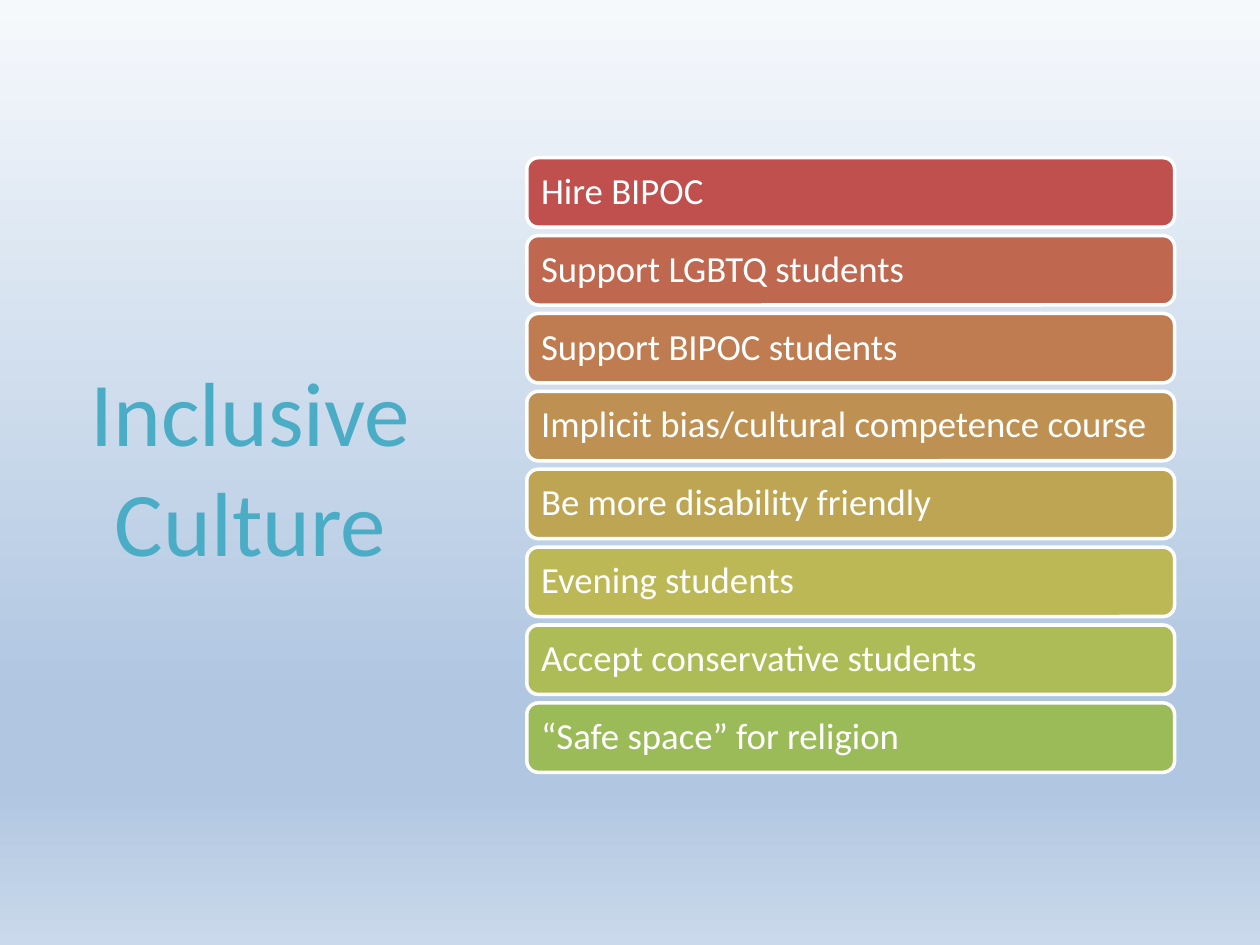
from lxml import etree
from pptx import Presentation
from pptx.dml.color import RGBColor
from pptx.enum import shapes, text
from pptx.oxml.ns import qn
from pptx.util import Cm, Pt

TITLE = "Inclusive Culture"
BARS = [
    ("Hire BIPOC", "C0504D"),
    ("Support LGBTQ students", "BF674F"),
    ("Support BIPOC students", "BF7C50"),
    ("Implicit bias/cultural competence course", "BE9152"),
    ("Be more disability friendly", "BDA554"),
    ("Evening students", "BCB856"),
    ("Accept conservative students", "AEBC57"),
    ("“Safe space” for religion", "9BBB59"),
]
COLORS = {"title": "4BACC6", "white": "FFFFFF"}
BACKGROUND = [(0, "F6F9FC"), (74, "B0C6E1"), (83, "B0C6E1"), (100, "CAD9EB")]
FONT = "Calibri"

# Bar stack, in cm
LEFT, TOP, WIDTH, HEIGHT, PITCH = 10.62, 3.18, 13.06, 1.4, 1.57


def style(p, size, color, align):
    p.alignment = align
    p.font.name = FONT
    p.font.size = Pt(size)
    p.font.color.rgb = RGBColor.from_string(color)


def set_background(s):
    fill = s.background.fill
    fill.gradient()
    fill.gradient_angle = 270
    stops = s.element.find(".//" + qn("a:gsLst"))
    for old in list(stops):
        stops.remove(old)
    for percent, color in BACKGROUND:
        stop = etree.SubElement(stops, qn("a:gs"), pos=str(percent * 1000))
        etree.SubElement(stop, qn("a:srgbClr"), val=color)


def add_title(s):
    sp = s.shapes.title
    sp.left, sp.top, sp.width, sp.height = Cm(1.09), Cm(1.73), Cm(7.92), Cm(15.29)
    tf = sp.text_frame
    tf.text = TITLE
    tf.word_wrap = True
    tf.vertical_anchor = text.MSO_ANCHOR.MIDDLE
    style(tf.paragraphs[0], 52, COLORS["title"], text.PP_ALIGN.CENTER)


def add_bar(s, row, label, color):
    sp = s.shapes.add_shape(shapes.MSO_SHAPE.ROUNDED_RECTANGLE, Cm(LEFT),
                            Cm(TOP + row * PITCH), Cm(WIDTH), Cm(HEIGHT))
    sp.shadow.inherit = False
    sp.fill.solid()
    sp.fill.fore_color.rgb = RGBColor.from_string(color)
    sp.line.color.rgb = RGBColor.from_string(COLORS["white"])
    sp.line.width = Pt(2)
    tf = sp.text_frame
    tf.word_wrap = True
    tf.vertical_anchor = text.MSO_ANCHOR.MIDDLE
    tf.margin_left = tf.margin_right = tf.margin_top = tf.margin_bottom = Cm(0.22)
    p = tf.paragraphs[0]
    p.text = label
    p.line_spacing = 0.9
    style(p, 21, COLORS["white"], text.PP_ALIGN.LEFT)


def main():
    prs = Presentation()
    prs.slide_width, prs.slide_height = Cm(25.4), Cm(19.05)
    s = prs.slides.add_slide(prs.slide_layouts[5])  # title only
    set_background(s)
    add_title(s)
    for row, (label, color) in enumerate(BARS):
        add_bar(s, row, label, color)
    prs.save("out.pptx")


if __name__ == "__main__":
    main()
